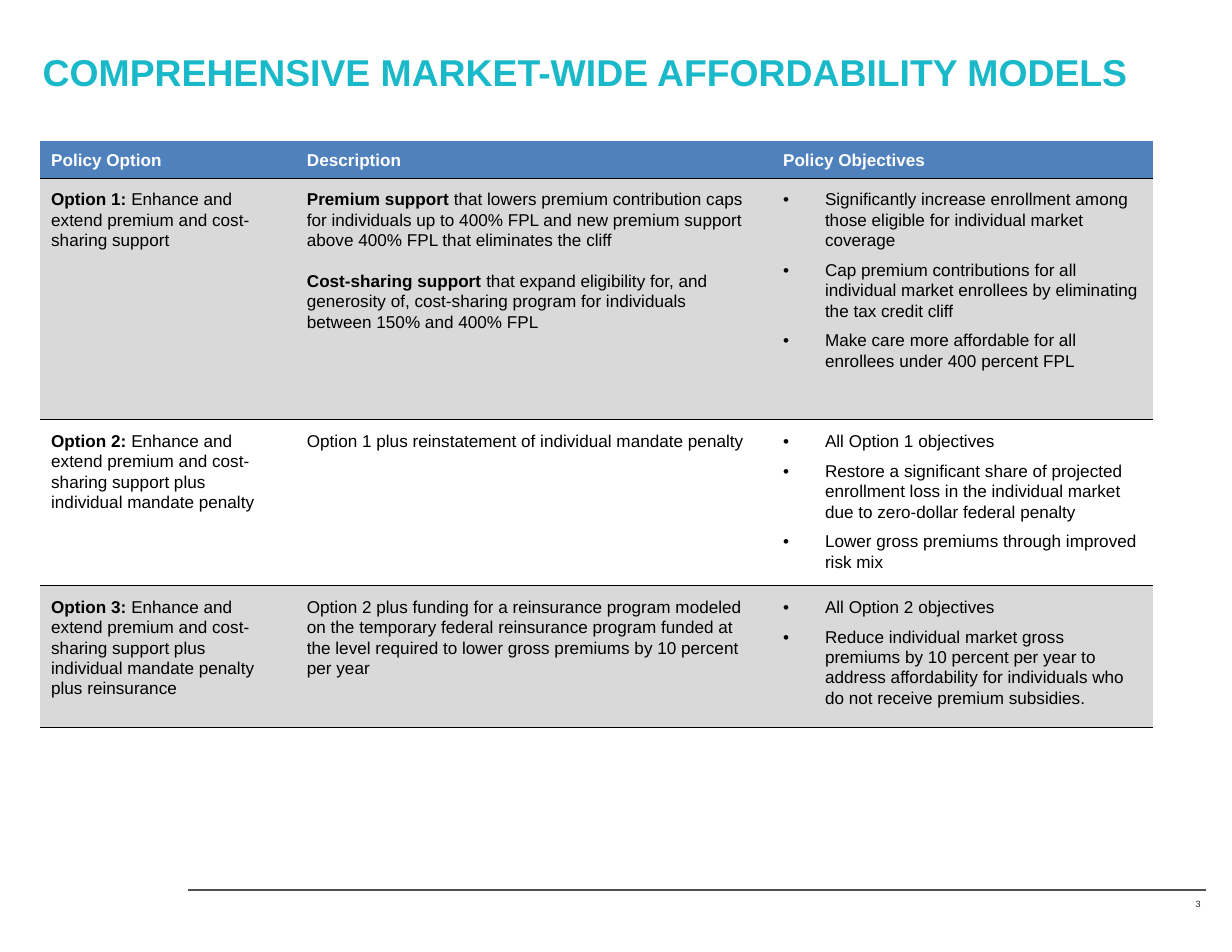
from dataclasses import dataclass

from lxml.etree import SubElement
from pptx import Presentation
from pptx.dml.color import RGBColor as Rgb
from pptx.enum.shapes import MSO_CONNECTOR as Connector
from pptx.enum.text import MSO_ANCHOR as Anchor, PP_ALIGN as Align
from pptx.oxml.ns import qn
from pptx.util import Cm, Pt


@dataclass(frozen=True)
class Theme:
    """Colours, font and type sizes of the deck."""
    font: str = "Arial"
    teal: str = "19B9CA"
    blue: str = "4F81BD"
    band: str = "D9D9D9"
    white: str = "FFFFFF"
    black: str = "000000"
    rule: str = "554D56"
    number: str = "231F20"
    title_size: float = 24
    body_size: float = 11
    number_size: float = 5.8


THEME = Theme()
PLAIN_STYLE = "{2D5ABB26-0587-4C30-8999-92F81FD0307C}"
HEADERS = ["Policy Option", "Description", "Policy Objectives"]
OPTIONS = [
    (
        ("Option 1: ", "Enhance and extend premium and cost-sharing support"),
        [
            ("Premium support ",
             "that lowers premium contribution caps for individuals up to 400% FPL "
             "and new premium support above 400% FPL that eliminates the cliff"),
            ("Cost-sharing support",
             " that expand eligibility for, and generosity of, cost-sharing program "
             "for individuals between 150% and 400% FPL"),
        ],
        [
            "Significantly increase enrollment among those eligible for individual market coverage",
            "Cap premium contributions for all individual market enrollees by eliminating "
            "the tax credit cliff",
            "Make care more affordable for all enrollees under 400 percent FPL",
        ],
    ),
    (
        ("Option 2: ", "Enhance and extend premium and cost-sharing support plus "
                       "individual mandate penalty"),
        [("", "Option 1 plus reinstatement of individual mandate penalty")],
        [
            "All Option 1 objectives",
            "Restore a significant share of projected enrollment loss in the individual "
            "market due to zero-dollar federal penalty",
            "Lower gross premiums through improved risk mix",
        ],
    ),
    (
        ("Option 3: ", "Enhance and extend premium and cost-sharing support plus "
                       "individual mandate penalty plus reinsurance"),
        [("", "Option 2 plus funding for a reinsurance program modeled on the temporary "
              "federal reinsurance program funded at the level required to lower gross "
              "premiums by 10 percent per year")],
        [
            "All Option 2 objectives",
            "Reduce individual market gross premiums by 10 percent per year to address "
            "affordability for individuals who do not receive premium subsidies.",
        ],
    ),
]


def add_span(para, text, size, color, bold=False):
    """Append one styled run to a paragraph."""
    span = para.add_run()
    span.text = text
    span.font.name = THEME.font
    span.font.size = Pt(size)
    span.font.bold = bold
    span.font.color.rgb = Rgb.from_string(color)


def set_insets(target, left, top, right, bottom=0):
    """Set the margins of a text frame or cell in centimetres."""
    target.margin_left, target.margin_top = Cm(left), Cm(top)
    target.margin_right, target.margin_bottom = Cm(right), Cm(bottom)


def add_label(page, box, text, size, color, bold=False, top_inset=0):
    """Place a single-run text box and return its frame."""
    frame = page.shapes.add_textbox(*map(Cm, box)).text_frame
    frame.word_wrap = True
    set_insets(frame, 0, top_inset, 0)
    add_span(frame.paragraphs[0], text, size, color, bold)
    return frame


def add_bullet(para):
    """Give a paragraph a hanging bullet."""
    props = para._p.get_or_add_pPr()
    props.set("marL", str(Cm(0.95)))
    props.set("indent", str(Cm(-0.95)))
    SubElement(props, qn("a:buFont"), typeface=THEME.font)
    SubElement(props, qn("a:buChar"), char="•")


def add_bottom_border(cell):
    """Draw a thin line under a cell."""
    props = cell._tc.get_or_add_tcPr()
    border = SubElement(props, qn("a:lnB"), w=str(Pt(0.5)))
    fill = SubElement(border, qn("a:solidFill"))
    SubElement(fill, qn("a:srgbClr"), val=THEME.black)


def style_cell(cell, fill, insets, anchor=Anchor.TOP):
    """Set border, fill, margins and anchor of a cell."""
    add_bottom_border(cell)
    if fill:
        cell.fill.solid()
        cell.fill.fore_color.rgb = Rgb.from_string(fill)
    else:
        cell.fill.background()
    set_insets(cell, *insets)
    cell.vertical_anchor = anchor


def write_cell(cell, entries, bulleted=False, gap=0, after=0, color=THEME.black):
    """Write (bold, regular) entries as the paragraphs of a cell."""
    frame = cell.text_frame
    for index, (strong, regular) in enumerate(entries):
        para = frame.add_paragraph() if index else frame.paragraphs[0]
        para.line_spacing = 1.07
        para.space_after = Pt(after)
        if index and gap:
            para.space_before = Pt(gap)
        if bulleted:
            add_bullet(para)
        if strong:
            add_span(para, strong, THEME.body_size, color, True)
        if regular:
            add_span(para, regular, THEME.body_size, color)


def add_options_table(page, box):
    """Place the policy table in the given box."""
    widths, heights = (5.54, 10.8, 8.89), (0.84, 5.48, 3.76, 3.22)
    table = page.shapes.add_table(len(heights), len(widths), *map(Cm, box)).table
    table._tbl.tblPr.find(qn("a:tableStyleId")).text = PLAIN_STYLE
    table.first_row = table.horz_banding = False
    for column, width in zip(table.columns, widths):
        column.width = Cm(width)
    for row, height in zip(table.rows, heights):
        row.height = Cm(height)

    lefts = (0.25, 0.51, 0.51)
    for index, (header, right) in enumerate(zip(HEADERS, (0.15, 0.15, 0))):
        cell = table.cell(0, index)
        style_cell(cell, THEME.blue, (lefts[index], 0, right), Anchor.MIDDLE)
        write_cell(cell, [(header, "")], color=THEME.white)

    for number, (option, description, objectives) in enumerate(OPTIONS, start=1):
        cells = [table.cell(number, index) for index in range(len(widths))]
        for cell, left, right in zip(cells, lefts, (0.15, 0.25, 0.25)):
            style_cell(cell, THEME.band if number % 2 else None, (left, 0.25, right))
        write_cell(cells[0], [option])
        write_cell(cells[1], description, gap=13)
        write_cell(cells[2], [("", text) for text in objectives], bulleted=True, after=6)


def add_footer(page, box):
    """Place the rule along the top of the box and the page number under it."""
    left, top, width, height = box
    rule = page.shapes.add_connector(
        Connector.STRAIGHT, Cm(left), Cm(top), Cm(left + width), Cm(top))
    rule.line.color.rgb = Rgb.from_string(THEME.rule)
    rule.line.width = Pt(1)
    SubElement(rule._element.spPr, qn("a:effectLst"))
    number_box = (left + width - 2.36, top - 0.25, 2.23, height)
    frame = add_label(page, number_box, "3", THEME.number_size, THEME.number)
    frame.vertical_anchor = Anchor.MIDDLE
    frame.paragraphs[0].alignment = Align.RIGHT


def main():
    """Build and save the deck."""
    deck = Presentation()
    deck.slide_width, deck.slide_height = Cm(27.94), Cm(21.59)
    page = deck.slides.add_slide(deck.slide_layouts[6])
    add_footer(page, (4.27, 20.19, 23.09, 1.14))
    add_label(page, (0.97, 1.02, 26.06, 2.18),
              "COMPREHENSIVE MARKET-WIDE AFFORDABILITY MODELS",
              THEME.title_size, THEME.teal, bold=True, top_inset=0.1)
    add_options_table(page, (0.91, 3.2, 25.23, 13.3))
    deck.save("out.pptx")


if __name__ == "__main__":
    main()
